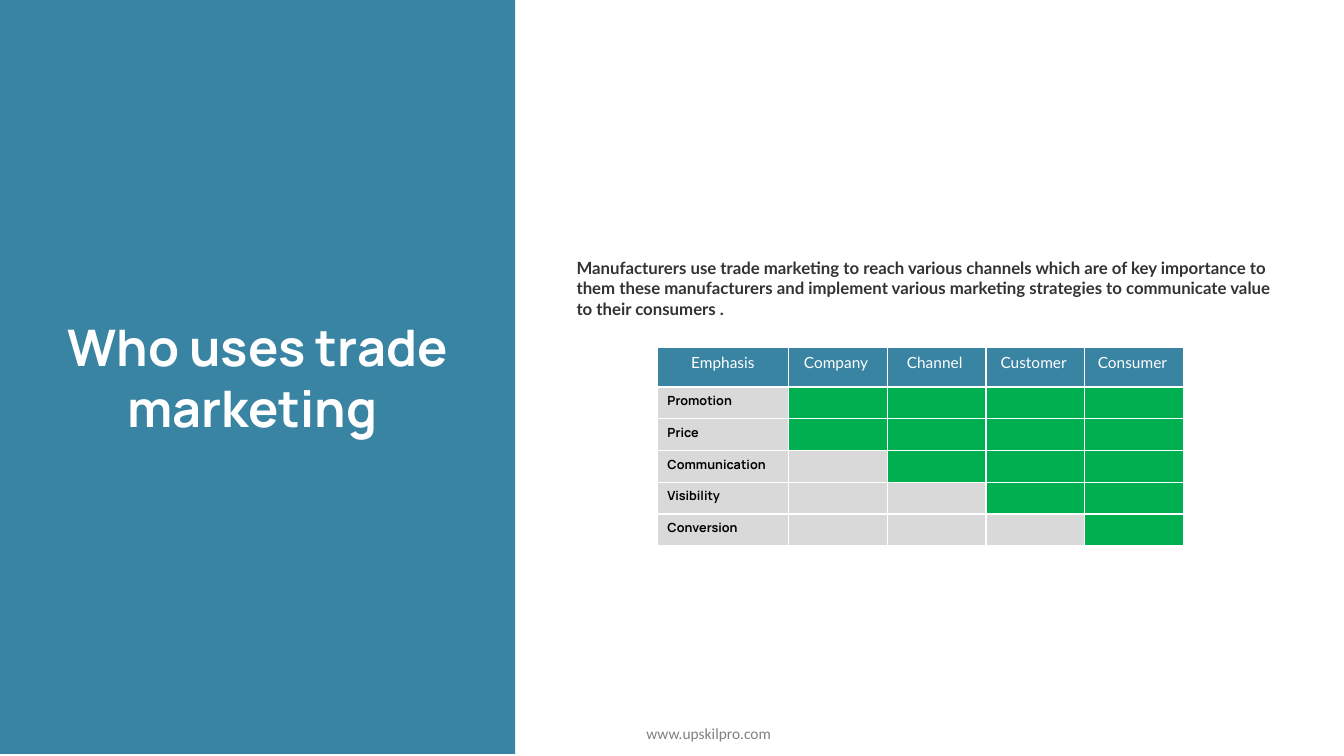
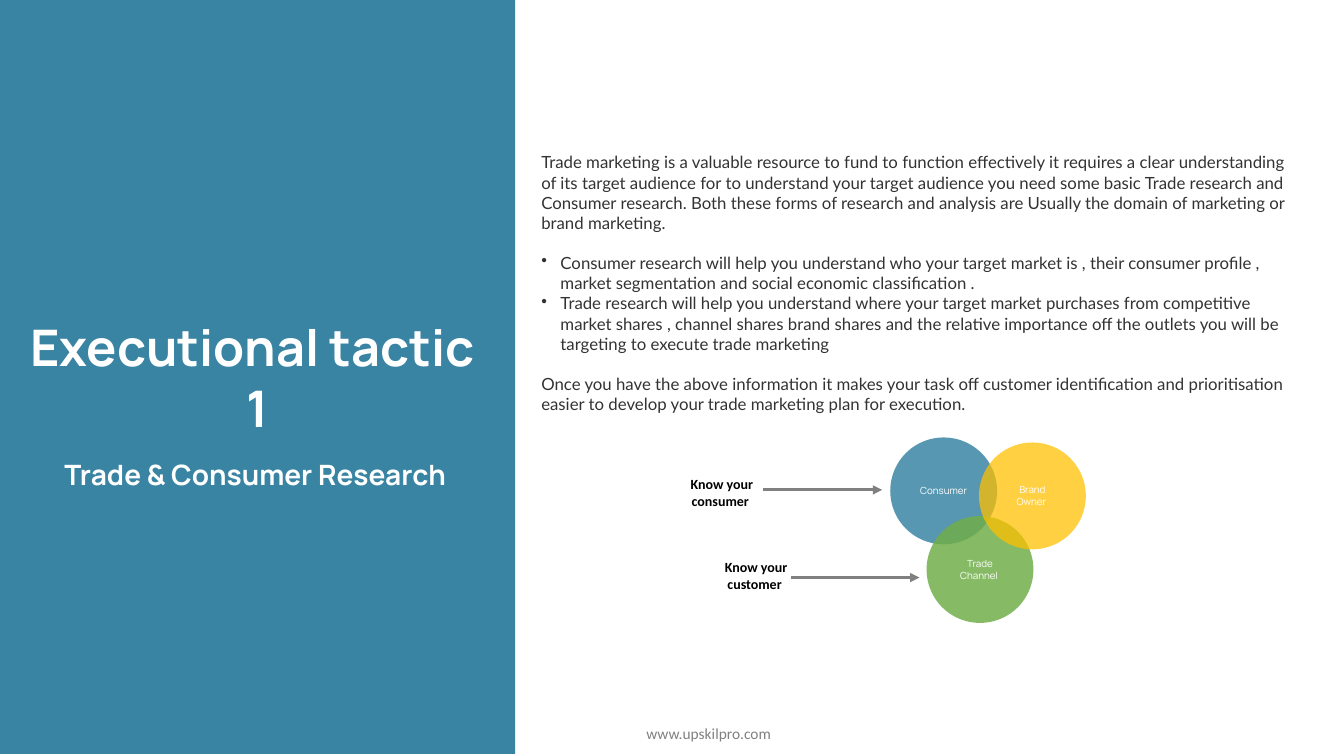
"""Build two trade marketing slides with a shared title panel and footer."""
from lxml.etree import SubElement
from pptx import Presentation
from pptx.dml.color import RGBColor
from pptx.enum.shapes import MSO_CONNECTOR as LINE, MSO_SHAPE as SHAPE
from pptx.enum.text import MSO_ANCHOR as ANCHOR, PP_ALIGN as ALIGN
from pptx.oxml.ns import qn
from pptx.util import Inches, Pt

BLUE = RGBColor(0x39, 0x84, 0xA3)
GREEN = RGBColor(0x00, 0xB0, 0x50)
LEAF = RGBColor(0x70, 0xAD, 0x47)
GOLD = RGBColor(0xFF, 0xC0, 0x00)
PALE = RGBColor(0xD9, 0xD9, 0xD9)
GRAY = RGBColor(0x80, 0x80, 0x80)
DARK = RGBColor(0x33, 0x33, 0x33)
BLACK = RGBColor(0x00, 0x00, 0x00)
WHITE = RGBColor(0xFF, 0xFF, 0xFF)


def write(frame, lines, size, face, color, bold=False, align=ALIGN.CENTER):
    """Fill a text frame with evenly styled paragraphs."""
    frame.word_wrap = True
    for i, line in enumerate(lines):
        para = frame.paragraphs[0] if i == 0 else frame.add_paragraph()
        para.text = line
        para.alignment = align
        font = para.font
        font.size, font.name, font.bold = Pt(size), face, bold
        font.color.rgb = color


def add_solid(slide, kind, box, color):
    """Add a plain filled shape with centred text."""
    shape = slide.shapes.add_shape(kind, *map(Inches, box))
    shape.shadow.inherit = False
    shape.fill.solid()
    shape.fill.fore_color.rgb = color
    shape.line.fill.background()
    shape.text_frame.vertical_anchor = ANCHOR.MIDDLE
    return shape


deck = Presentation()
deck.slide_width, deck.slide_height = Inches(13.33), Inches(7.5)

titles = [["Who uses trade marketing "], ["Executional tactic ", "1"]]
for title in titles:
    slide = deck.slides.add_slide(deck.slide_layouts[6])
    panel = add_solid(slide, SHAPE.RECTANGLE, (0, 0, 5.11, 7.48), BLUE)
    write(panel.text_frame, title, 36, "Manrope", WHITE, True)
    foot = slide.shapes.add_textbox(
        Inches(4.78), Inches(7.08), Inches(4.5), Inches(0.4)).text_frame
    foot.vertical_anchor = ANCHOR.MIDDLE
    write(foot, ["www.upskilpro.com"], 11, "Calibri", GRAY)
    foot.paragraphs[0].space_after = Pt(6)

users, tactic = deck.slides

intro = users.shapes.add_textbox(
    Inches(5.62), Inches(2.51), Inches(7.23), Inches(0.71))
write(intro.text_frame, [
    "Manufacturers use trade marketing to reach various channels which are of "
    "key importance to them these manufacturers and implement various marketing "
    "strategies to communicate value to their consumers ."],
    12, "Lato", DARK, True, ALIGN.LEFT)

heads = ["Emphasis", "Company ", "Channel ", "Customer ", "Consumer "]
rows = [("Promotion", 1), ("Price", 1), ("Communication", 2),
        ("Visibility", 3), ("Conversion", 4)]
table = users.shapes.add_table(
    len(rows) + 1, len(heads), Inches(6.52), Inches(3.45),
    Inches(5.22), Inches(1.96)).table
for i, col in enumerate(table.columns):
    col.width = Inches(0.98 if i else 1.3)
for i, row in enumerate(table.rows):
    row.height = Inches(0.315 if i else 0.39)
    for j, cell in enumerate(row.cells):
        props = cell._tc.get_or_add_tcPr()
        for side in ("a:lnL", "a:lnR", "a:lnT", "a:lnB"):
            edge = SubElement(props, qn(side), w=str(Pt(1)))
            paint = SubElement(edge, qn("a:solidFill"))
            SubElement(paint, qn("a:srgbClr"), val=str(WHITE))
        cell.fill.solid()
        if i == 0:
            cell.fill.fore_color.rgb = BLUE
            write(cell.text_frame, [heads[j]], 11, "Lato", WHITE)
            continue
        name, start = rows[i - 1]
        cell.fill.fore_color.rgb = GREEN if j >= start else PALE
        if j == 0:
            write(cell.text_frame, [name], 9, "Manrope", BLACK, True, ALIGN.LEFT)
        else:
            blank = cell.text_frame.paragraphs[0]
            blank._p.get_or_add_endParaRPr().set("sz", "900")

body = tactic.shapes.add_textbox(
    Inches(5.27), Inches(1.46), Inches(7.68), Inches(2.73)).text_frame
write(body, [
    "Trade marketing is a valuable resource to fund to function effectively it "
    "requires a clear understanding of its target audience for to understand your "
    "target audience you need some basic Trade research and Consumer research. "
    "Both these forms of research and analysis are Usually the domain of marketing "
    "or brand marketing.",
    "Consumer research will help you understand who your target market is , their "
    "consumer profile , market segmentation and social economic classification .",
    "Trade research will help you understand where your target market purchases "
    "from competitive market shares , channel shares brand shares and the relative "
    "importance off the outlets you will be targeting to execute trade marketing",
    "Once you have the above information it makes your task off customer "
    "identification and prioritisation easier to develop your trade marketing plan "
    "for execution."], 12, "Lato", DARK, align=ALIGN.LEFT)
for para in body.paragraphs[1:3]:
    props = para._p.get_or_add_pPr()
    props.set("marL", str(Inches(0.19)))
    props.set("indent", str(-Inches(0.19)))
    mark = SubElement(props, qn("a:buChar"), char="•")
    props.find(qn("a:defRPr")).addprevious(mark)
for i in (1, 3):
    body.paragraphs[i].space_before = Pt(14.4)

labels = [
    ("Know your consumer ", (6.66, 4.67, 1, 0.44), 10, "Calibri", BLACK),
    ("Know your customer ", (7, 5.49, 1, 0.44), 10, "Calibri", BLACK),
    ("Trade & Consumer Research ", (0, 4.49, 5.12, 0.44), 20, "Manrope", WHITE)]
for text, box, size, face, color in labels:
    label = tactic.shapes.add_textbox(*map(Inches, box))
    write(label.text_frame, [text], size, face, color, True)

circles = [("Consumer", 8.83, 4.34, BLUE, 84),
           ("Trade Channel ", 9.19, 5.12, LEAF, 84),
           ("Brand Owner ", 9.71, 4.39, GOLD, 74)]
for text, left, top, color, alpha in circles:
    disc = add_solid(tactic, SHAPE.FLOWCHART_CONNECTOR,
                     (left, top, 1.06, 1.06), color)
    tint = disc.fill._xPr.find(qn("a:solidFill"))[0]
    SubElement(tint, qn("a:alpha"), val=str(alpha * 1000))
    write(disc.text_frame, [text], 7, "Manrope", WHITE)

for start, end, y in [(7.57, 8.75, 4.86), (7.85, 9.12, 5.73)]:
    arrow = tactic.shapes.add_connector(
        LINE.STRAIGHT, Inches(start), Inches(y), Inches(end), Inches(y))
    arrow.line.color.rgb = GRAY
    arrow.line.width = Pt(2.25)
    SubElement(arrow.line._get_or_add_ln(), qn("a:tailEnd"), type="triangle")
    SubElement(arrow._element.spPr, qn("a:effectLst"))

deck.save("out.pptx")
